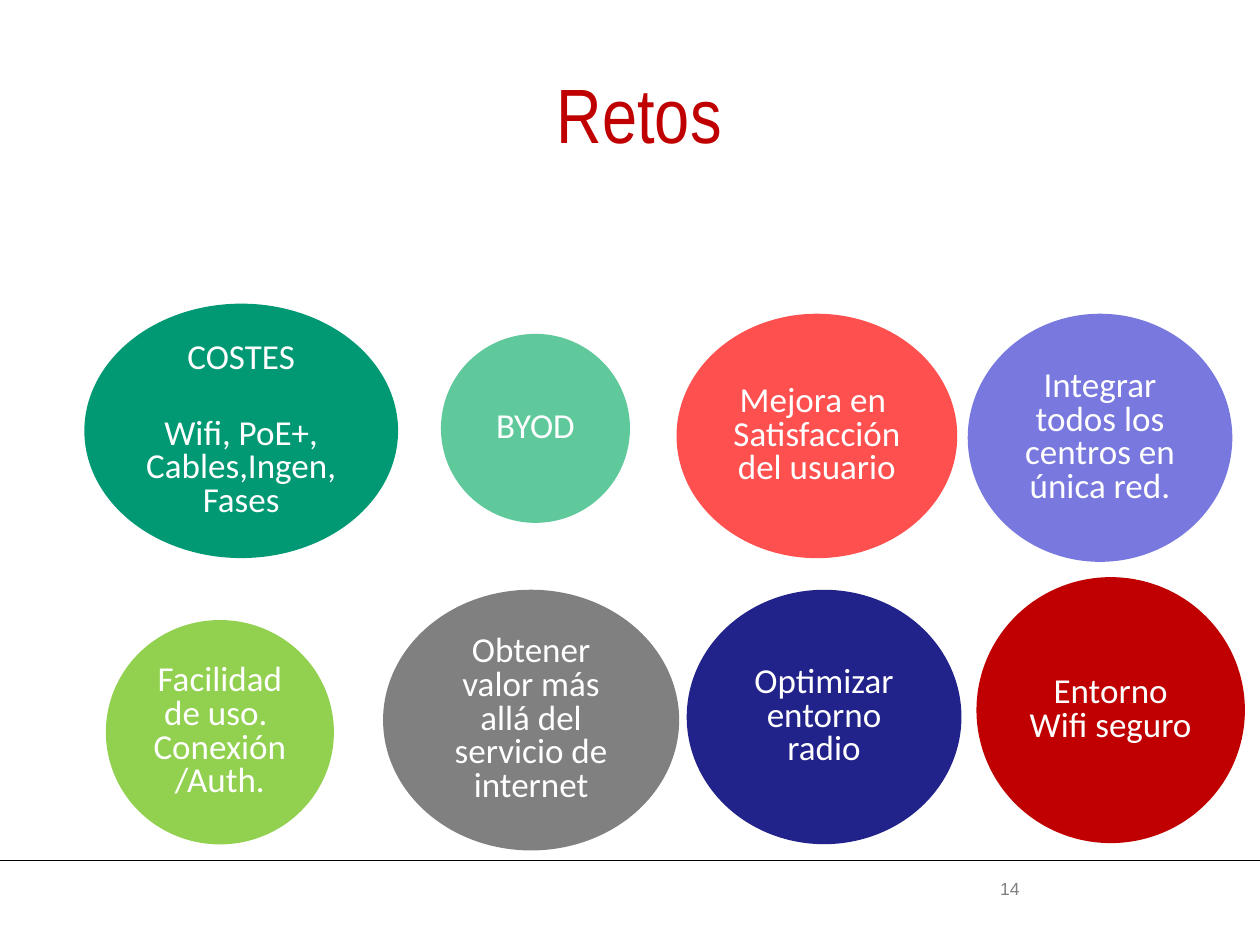
from lxml import etree
from pptx import Presentation
from pptx.dml.color import RGBColor
from pptx.enum.shapes import MSO_CONNECTOR, MSO_SHAPE
from pptx.enum.text import MSO_ANCHOR, MSO_AUTO_SIZE, PP_ALIGN
from pptx.oxml.ns import qn
from pptx.util import Pt

ELLIPSE = MSO_SHAPE.OVAL
STRAIGHT = MSO_CONNECTOR.STRAIGHT
TOP, MIDDLE = MSO_ANCHOR.TOP, MSO_ANCHOR.MIDDLE
LEFT, CENTER = PP_ALIGN.LEFT, PP_ALIGN.CENTER
GROW = MSO_AUTO_SIZE.SHAPE_TO_FIT_TEXT

COLORS = {
    "white": "FFFFFF", "black": "000000", "gray": "808080", "red": "C00000",
    "lime": "92D050", "lilac": "7878DE", "mint": "60C99C", "green": "009973",
    "navy": "22228B", "coral": "FF5050",
}

CHALLENGES = [
    (60.5, 354.3, 130.3, 128.2, "lime", ["Facilidad de uso. \vConexión/Auth."]),
    (553, 179.3, 151.2, 141.8, "lilac", ["Integrar todos los centros en única red."]),
    (558, 329.8, 153.4, 152, "red", ["Entorno Wifi seguro"]),
    (252, 190.8, 108, 108, "mint", ["BYOD"]),
    (48.2, 173.5, 179.3, 145.4, "green", ["COSTES", "Wifi, PoE+, Cables,Ingen,Fases"]),
    (392.4, 337, 157, 145.4, "navy", ["Optimizar entorno radio"]),
    (386.6, 179.3, 160.4, 139.7, "coral", ["Mejora en \vSatisfacción del usuario"]),
    (218.9, 337, 169.2, 149, "gray", ["Obtener valor más allá del servicio de internet"]),
]


def rgb(name):
    return RGBColor.from_string(COLORS[name])


def format_text(p, font, size, color, align, spacing=None):
    p.alignment = align
    p.line_spacing = spacing
    for r in p.runs:
        r.font.name = font
        r.font.size = Pt(size)
        r.font.color.rgb = rgb(color)


def add_title(slide, text):
    sp = slide.shapes.title
    sp.left, sp.top, sp.width, sp.height = Pt(311), Pt(44.6), Pt(134), Pt(49.7)
    tf = sp.text_frame
    tf.text = text
    tf.vertical_anchor = TOP
    tf.auto_size = GROW
    format_text(tf.paragraphs[0], "Arial Narrow", 44, "red", LEFT, 0.8)


def add_challenge(slide, x, y, w, h, color, lines):
    sp = slide.shapes.add_shape(ELLIPSE, Pt(x), Pt(y), Pt(w), Pt(h))
    sp.shadow.inherit = False
    sp.fill.solid()
    sp.fill.fore_color.rgb = rgb(color)
    sp.line.fill.background()
    tf = sp.text_frame
    tf.word_wrap = True
    tf.vertical_anchor = MIDDLE
    tf.text = "\n".join(lines)
    for i, p in enumerate(tf.paragraphs):
        format_text(p, "Calibri", 20, "white", CENTER, 0.8)
        if i:
            p.space_before = Pt(24)


def add_footer_line(slide):
    line = slide.shapes.add_connector(STRAIGHT, 0, Pt(491.8), Pt(720), Pt(491.8))
    line.line.color.rgb = rgb("black")
    line.line.width = Pt(0.75)
    etree.SubElement(line._element.spPr, qn("a:effectLst"))


def add_page_number(slide, number):
    sp = slide.shapes.add_textbox(Pt(553), Pt(498.2), Pt(48.2), Pt(23.8))
    tf = sp.text_frame
    tf.word_wrap = True
    tf.text = number
    format_text(tf.paragraphs[0], "Arial", 10, "gray", CENTER)


def main():
    prs = Presentation()
    prs.slide_width, prs.slide_height = Pt(720), Pt(540)
    slide = prs.slides.add_slide(prs.slide_layouts[5])
    add_title(slide, "Retos")
    add_footer_line(slide)
    for challenge in CHALLENGES:
        add_challenge(slide, *challenge)
    add_page_number(slide, "14")
    prs.save("out.pptx")


if __name__ == "__main__":
    main()
